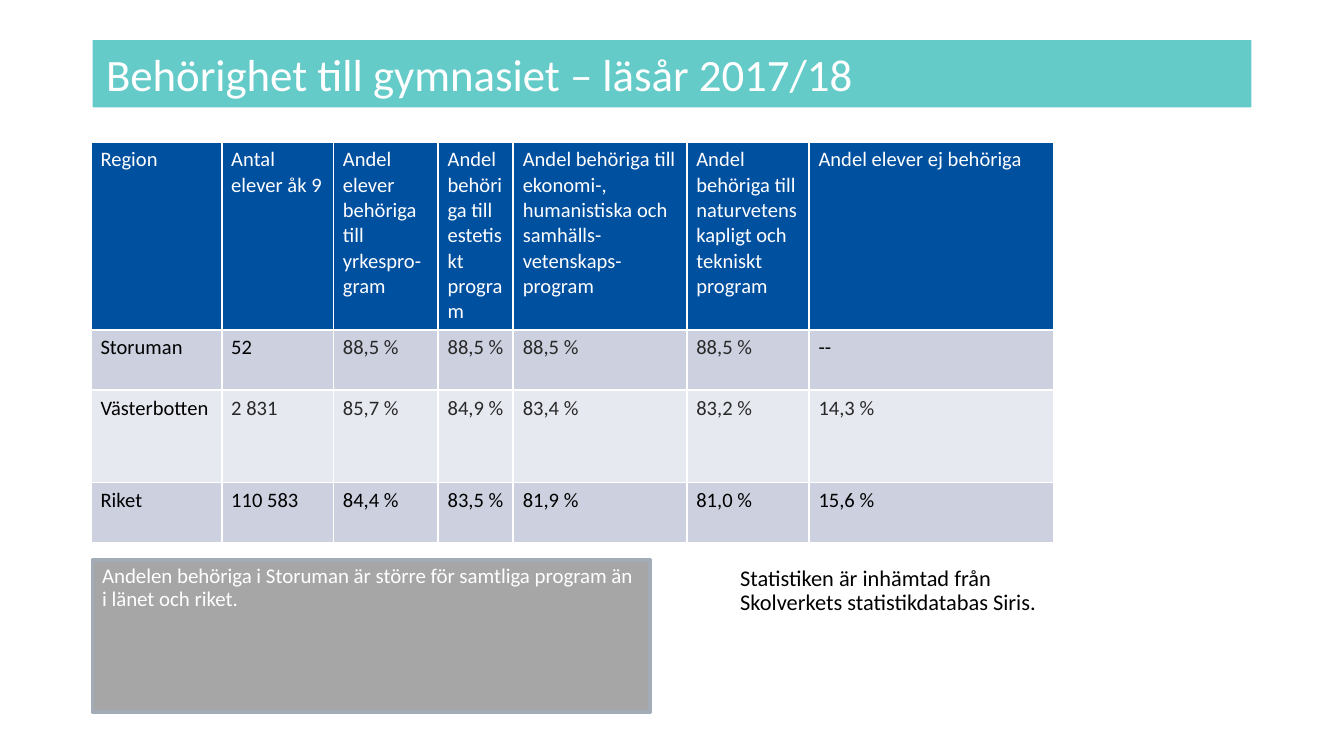
from lxml.etree import SubElement
from pptx import Presentation
from pptx.dml.color import RGBColor
from pptx.enum.shapes import MSO_SHAPE
from pptx.enum.text import MSO_ANCHOR, MSO_AUTO_SIZE, PP_ALIGN
from pptx.oxml.ns import qn
from pptx.util import Cm, Pt

TITLE = "Behörighet till gymnasiet – läsår 2017/18"
HEADER = [
    "Region",
    "Antal elever åk 9",
    "Andel elever behöriga till yrkespro-gram",
    "Andel behöriga till estetiskt program",
    "Andel behöriga till ekonomi-, humanistiska och samhälls-vetenskaps-program",
    "Andel behöriga till naturvetenskapligt och tekniskt program",
    "Andel elever ej behöriga",
]
REGIONS = [
    ["Storuman", "52", "88,5 %", "88,5 %", "88,5 %", "88,5 %", "--"],
    ["Västerbotten", "2 831", "85,7 %", "84,9 %", "83,4 %", "83,2 %", "14,3 %"],
    ["Riket", "110 583", "84,4 %", "83,5 %", "81,9 %", "81,0 %", "15,6 %"],
]
FINDING = "Andelen behöriga i Storuman är större för samtliga program än i länet och riket."
SOURCE = "Statistiken är inhämtad från Skolverkets statistikdatabas Siris."

WHITE = RGBColor(0xFF, 0xFF, 0xFF)
BLACK = RGBColor(0x00, 0x00, 0x00)
DARK = RGBColor(0x29, 0x29, 0x29)
TEAL = RGBColor(0x64, 0xCB, 0xC9)
BLUE = RGBColor(0x00, 0x50, 0xA0)
BANDS = [RGBColor(0xCC, 0xD0, 0xDF), RGBColor(0xE7, 0xE9, 0xF0)]
GREY = RGBColor(0xA6, 0xA6, 0xA6)
GREY_LINE = RGBColor(0xA3, 0xAB, 0xB6)

FONT = "Calibri"
LEFT = Cm(1.75)
NOTE_TOP = Cm(10.59)
COL_WIDTHS = [2.47, 2.11, 1.98, 1.42, 3.28, 2.31, 4.62]
ROW_HEIGHTS = [3.53, 1.14, 1.75, 1.14]
DARK_CELLS = {(1, c) for c in range(2, 6)} | {(2, c) for c in range(1, 7)}


def write(tf, text, size, color, spacing=None):
    tf.word_wrap = True
    tf.auto_size = MSO_AUTO_SIZE.NONE
    p = tf.paragraphs[0]
    p.text = text
    p.alignment = PP_ALIGN.LEFT
    p.line_spacing = spacing
    style(p, size, color)


def style(p, size, color):
    p.font.name = FONT
    p.font.size = Pt(size)
    p.font.color.rgb = color


def set_margins(box):
    box.margin_left = box.margin_right = Cm(0.18)
    box.margin_top = box.margin_bottom = Cm(0.1)


def add_borders(cell):
    tc_pr = cell._tc.get_or_add_tcPr()
    for side in ("a:lnL", "a:lnR", "a:lnT", "a:lnB"):
        ln = SubElement(tc_pr, qn(side), w=str(Pt(1)))
        fill = SubElement(ln, qn("a:solidFill"))
        SubElement(fill, qn("a:srgbClr"), val=str(WHITE))


def add_title(s):
    sp = s.shapes.title
    sp.left, sp.top, sp.width, sp.height = LEFT, Cm(0.76), Cm(21.9), Cm(1.27)
    sp.fill.solid()
    sp.fill.fore_color.rgb = TEAL
    sp.text_frame.vertical_anchor = MSO_ANCHOR.MIDDLE
    write(sp.text_frame, TITLE, 24, WHITE)


def add_statistics(s):
    rows = [HEADER] + REGIONS
    table = s.shapes.add_table(
        len(rows), len(HEADER), Cm(1.72), Cm(2.68),
        Cm(sum(COL_WIDTHS)), Cm(sum(ROW_HEIGHTS)),
    ).table
    table.first_row = table.horz_banding = False
    for column, width in zip(table.columns, COL_WIDTHS):
        column.width = Cm(width)
    for r, (values, height) in enumerate(zip(rows, ROW_HEIGHTS)):
        table.rows[r].height = Cm(height)
        for c, value in enumerate(values):
            cell = table.cell(r, c)
            set_margins(cell)
            add_borders(cell)
            cell.fill.solid()
            cell.fill.fore_color.rgb = BANDS[(r - 1) % 2] if r else BLUE
            color = DARK if (r, c) in DARK_CELLS else BLACK
            p = cell.text_frame.paragraphs[0]
            p.text = value
            style(p, 11, color if r else WHITE)


def add_finding(s):
    sp = s.shapes.add_shape(MSO_SHAPE.RECTANGLE, LEFT, NOTE_TOP, Cm(10.54), Cm(2.87))
    sp.shadow.inherit = False
    sp.fill.solid()
    sp.fill.fore_color.rgb = GREY
    sp.line.color.rgb = GREY_LINE
    sp.line.width = Pt(2)
    tf = sp.text_frame
    tf.vertical_anchor = MSO_ANCHOR.TOP
    set_margins(tf)
    write(tf, FINDING, 11.2, WHITE, 0.9)


def add_source(s):
    sp = s.shapes.add_textbox(Cm(13.74), NOTE_TOP, Cm(6.15), Cm(1.88))
    write(sp.text_frame, SOURCE, 12, BLACK, 0.9)


def main():
    prs = Presentation()
    prs.slide_width, prs.slide_height = Cm(25.4), Cm(14.29)
    s = prs.slides.add_slide(prs.slide_layouts[5])
    add_title(s)
    add_source(s)
    add_statistics(s)
    add_finding(s)
    prs.save("out.pptx")


if __name__ == "__main__":
    main()
